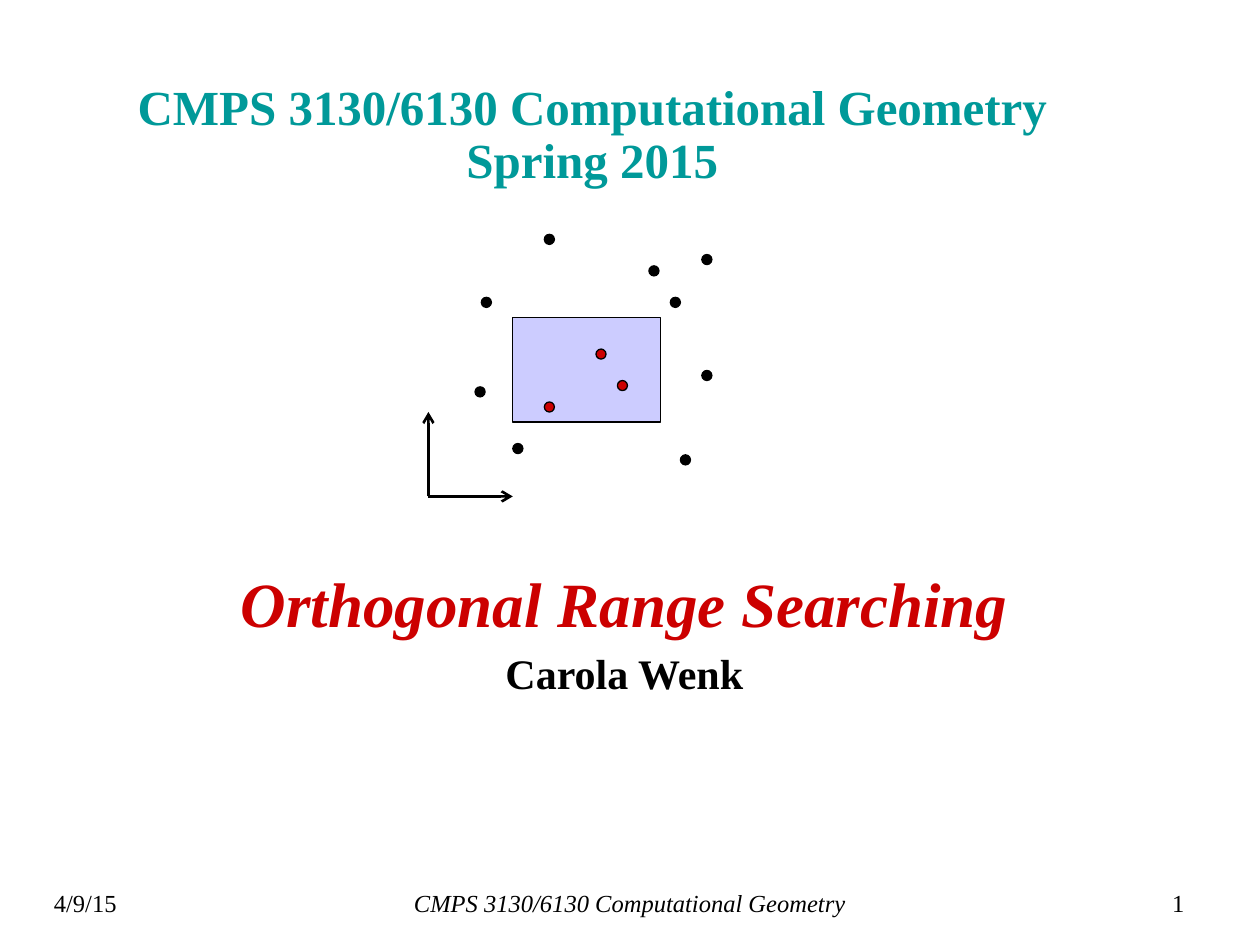
from lxml import etree
from pptx import Presentation
from pptx.dml.color import RGBColor
from pptx.enum.shapes import MSO_CONNECTOR, MSO_SHAPE
from pptx.enum.text import MSO_ANCHOR, MSO_AUTO_SIZE, PP_ALIGN
from pptx.oxml.ns import qn
from pptx.util import Inches, Pt

BLACK, TEAL, RED, LAVENDER = "000000", "009999", "CC0000", "CCCCFF"
OUTSIDE = [(0.37, 1.21), (0.92, 0), (1.92, 0.5), (0.42, 0.5), (2.17, 1.08),
           (2, 1.75), (0.67, 1.66), (1.75, 0.25), (2.17, 0.16)]
INSIDE = [(1.33, 0.91), (1.5, 1.16), (0.92, 1.33)]


def color(hex_string):
    """Turn a hex string into a colour."""
    return RGBColor.from_string(hex_string)


def format_runs(p, size, fill, bold=False, italic=False):
    """Format every run of a paragraph."""
    for r in p.runs:
        r.font.name = "Times New Roman"
        r.font.size = Pt(size)
        r.font.bold = bold
        r.font.italic = italic
        r.font.color.rgb = color(fill)


def add_textbox(s, left, top, width, height):
    """Add a wrapping text box and return its frame."""
    tf = s.shapes.add_textbox(Inches(left), Inches(top), Inches(width), Inches(height)).text_frame
    tf.word_wrap = True
    return tf


def add_filled(shapes, kind, left, top, width, height, fill):
    """Add a filled preset shape with a thin black outline."""
    sp = shapes.add_shape(kind, Inches(left), Inches(top), Inches(width), Inches(height))
    sp.shadow.inherit = False
    sp.fill.solid()
    sp.fill.fore_color.rgb = color(fill)
    sp.line.color.rgb = color(BLACK)
    sp.line.width = Pt(0.75)


def add_points(shapes, left, top, offsets, fill):
    """Add one dot for each offset from the plot corner."""
    for x, y in offsets:
        add_filled(shapes, MSO_SHAPE.OVAL, left + x, top + y, 0.08, 0.08, fill)


def add_axis(s, x1, y1, x2, y2):
    """Add an axis with an open arrowhead at its end."""
    line = s.shapes.add_connector(MSO_CONNECTOR.STRAIGHT, Inches(x1), Inches(y1), Inches(x2), Inches(y2))
    line.line.color.rgb = color(BLACK)
    line.line.width = Pt(1.5)
    etree.SubElement(line.line._get_or_add_ln(), qn("a:tailEnd"), type="arrow")
    etree.SubElement(line._element.spPr, qn("a:effectLst"))


def add_title(s, left, top, width, height):
    """Add the course title."""
    tf = add_textbox(s, left, top, width, height)
    tf.vertical_anchor = MSO_ANCHOR.MIDDLE
    tf.text = "CMPS 3130/6130 Computational Geometry\vSpring 2015"
    p = tf.paragraphs[0]
    p.alignment = PP_ALIGN.CENTER
    p.line_spacing = 0.9
    format_runs(p, 28, TEAL, bold=True)


def add_subtitle(s, left, top, width, height):
    """Add the lecture topic and the lecturer."""
    tf = add_textbox(s, left, top, width, height)
    tf.text = "Orthogonal Range Searching\nCarola Wenk"
    topic, lecturer = tf.paragraphs
    for p, before in ((topic, 3), (lecturer, 7)):
        p.alignment = PP_ALIGN.CENTER
        p.line_spacing = 0.9
        p.space_before = Pt(before)
    format_runs(topic, 36, RED, bold=True, italic=True)
    format_runs(lecturer, 24, BLACK, bold=True)


def add_range_plot(s, left, top):
    """Add the points, the axes and the query rectangle."""
    add_points(s.shapes, left, top, OUTSIDE, BLACK)
    x, y, length = left, top + 2.08, 0.67
    add_axis(s, x, y, x, y - length)
    add_axis(s, x, y, x + length, y)
    query = s.shapes.add_group_shape().shapes
    add_filled(query, MSO_SHAPE.RECTANGLE, left + 0.67, top + 0.66, 1.17, 0.83, LAVENDER)
    add_points(query, left, top, INSIDE, RED)


def add_footer(s, top, height):
    """Add the date, the course name and the slide number."""
    for left, width, text, align, italic in (
            (0.33, 0.7, "4/9/15", PP_ALIGN.LEFT, False),
            (3.15, 3.7, "CMPS 3130/6130 Computational Geometry", PP_ALIGN.CENTER, True),
            (9.07, 0.43, "1", PP_ALIGN.RIGHT, False)):
        tf = add_textbox(s, left, top, width, height)
        tf.word_wrap = False
        tf.auto_size = MSO_AUTO_SIZE.SHAPE_TO_FIT_TEXT
        tf.text = text
        p = tf.paragraphs[0]
        p.alignment = align
        format_runs(p, 14, BLACK, italic=italic)


def main():
    """Build the title slide."""
    prs = Presentation()
    prs.slide_width, prs.slide_height = Inches(10), Inches(7.5)
    s = prs.slides.add_slide(prs.slide_layouts[6])
    add_title(s, 0.24, 0.54, 8.92, 1.08)
    add_subtitle(s, 0.33, 4.5, 9.25, 1.67)
    add_range_plot(s, 3.4, 1.86)
    add_footer(s, 7, 0.34)
    prs.save("out.pptx")


if __name__ == "__main__":
    main()
